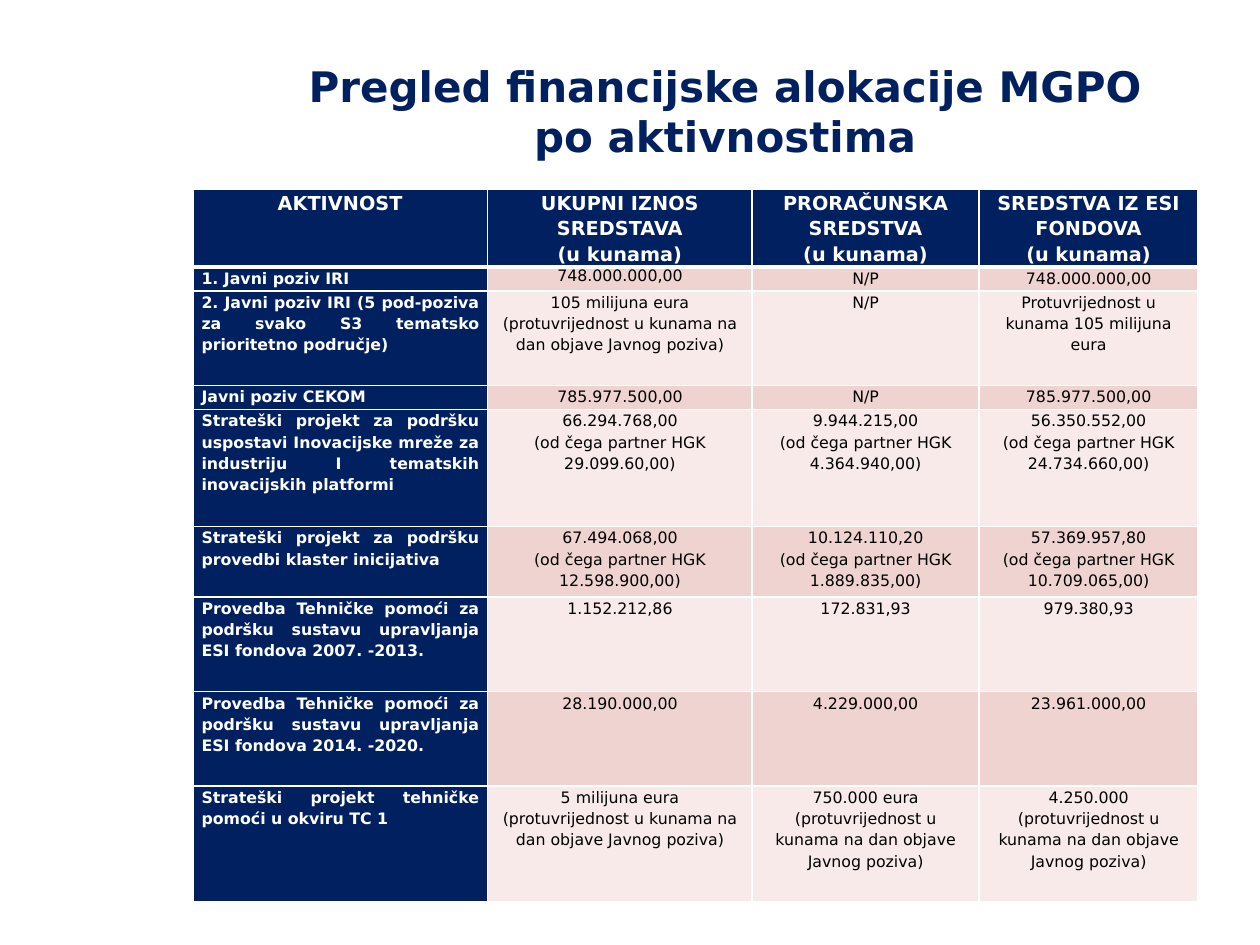
from lxml.etree import SubElement
from pptx import Presentation
from pptx.dml.color import RGBColor
from pptx.enum.text import MSO_ANCHOR, MSO_AUTO_SIZE, PP_ALIGN
from pptx.oxml.ns import qn
from pptx.util import Inches, Pt

NAVY = RGBColor(0x00, 0x20, 0x60)
WHITE = RGBColor(0xFF, 0xFF, 0xFF)
BLACK = RGBColor(0x00, 0x00, 0x00)
BANDS = [RGBColor(0xF7, 0xEA, 0xE9), RGBColor(0xEE, 0xD3, 0xD0)]
FONT = "DejaVu Sans"

TITLE = "Pregled financijske alokacije MGPO po aktivnostima"
ROWS = [
    ("AKTIVNOST", "UKUPNI IZNOS SREDSTAVA\n(u kunama)",
     "PRORAČUNSKA SREDSTVA\n(u kunama)", "SREDSTVA IZ ESI FONDOVA\n(u kunama)"),
    ("1. Javni poziv IRI", "748.000.000,00", "N/P", "748.000.000,00"),
    ("2. Javni poziv IRI (5 pod-poziva za svako S3 tematsko prioritetno područje)",
     "105 milijuna eura (protuvrijednost u kunama na dan objave Javnog poziva)",
     "N/P", "Protuvrijednost u kunama 105 milijuna eura"),
    ("Javni poziv CEKOM", "785.977.500,00", "N/P", "785.977.500,00"),
    ("Strateški projekt za podršku uspostavi Inovacijske mreže za industriju I "
     "tematskih inovacijskih platformi",
     "66.294.768,00\n(od čega partner HGK\n29.099.60,00)",
     "9.944.215,00\n(od čega partner HGK 4.364.940,00)",
     "56.350.552,00\n(od čega partner HGK 24.734.660,00)"),
    ("Strateški projekt za podršku provedbi klaster inicijativa",
     "67.494.068,00\n(od čega partner HGK 12.598.900,00)",
     "10.124.110,20\n(od čega partner HGK\n1.889.835,00)",
     "57.369.957,80\n(od čega partner HGK 10.709.065,00)"),
    ("Provedba Tehničke pomoći za podršku sustavu upravljanja ESI fondova 2007. -2013.",
     "1.152.212,86", "172.831,93", "979.380,93"),
    ("Provedba Tehničke pomoći za podršku sustavu upravljanja ESI fondova 2014. -2020.",
     "28.190.000,00", "4.229.000,00", "23.961.000,00"),
    ("Strateški projekt tehničke pomoći u okviru TC 1",
     "5 milijuna eura (protuvrijednost u kunama na dan objave Javnog poziva)",
     "750.000 eura (protuvrijednost u kunama na dan objave Javnog poziva)",
     "4.250.000 (protuvrijednost u kunama na dan objave Javnog poziva)"),
]
COLUMN_WIDTHS = [2.34, 2.1, 1.8, 1.74]
ROW_HEIGHTS = [0.62, 0.19, 0.75, 0.19, 0.93, 0.56, 0.75, 0.75, 0.92]


def set_font(paragraph, size, color, bold):
    paragraph.font.name = FONT
    paragraph.font.size = Pt(size)
    paragraph.font.color.rgb = color
    paragraph.font.bold = bold


def add_borders(cell, top, bottom):
    properties = cell._tc.get_or_add_tcPr()
    for side, width in (("L", 1), ("R", 1), ("T", top), ("B", bottom)):
        line = SubElement(properties, qn(f"a:ln{side}"), w=str(Pt(width)))
        fill = SubElement(line, qn("a:solidFill"))
        SubElement(fill, qn("a:srgbClr"), val=str(WHITE))


def fill_cell(cell, text, row, column):
    heading = row == 0 or column == 0
    cell.margin_left = cell.margin_right = Inches(0.07)
    cell.margin_top = cell.margin_bottom = 0
    add_borders(cell, 3 if row == 1 else 1, 3 if row == 0 else 1)
    cell.fill.solid()
    cell.fill.fore_color.rgb = NAVY if heading else BANDS[row % 2]
    cell.text = text
    for paragraph in cell.text_frame.paragraphs:
        justified = column == 0 and row > 0
        paragraph.alignment = PP_ALIGN.JUSTIFY if justified else PP_ALIGN.CENTER
        paragraph.line_spacing = 1 if (row, column) == (1, 1) else 1.15
        set_font(paragraph, 9 if row else 11, WHITE if heading else BLACK, heading)


def main():
    presentation = Presentation()
    presentation.slide_width, presentation.slide_height = Inches(10), Inches(7.5)
    slide = presentation.slides.add_slide(presentation.slide_layouts[5])

    title = slide.shapes.title
    title.left, title.top = Inches(2.17), Inches(0.25)
    title.width, title.height = Inches(7.17), Inches(1.08)
    title.text_frame.text = TITLE
    title.text_frame.auto_size = MSO_AUTO_SIZE.NONE
    title.text_frame.vertical_anchor = MSO_ANCHOR.BOTTOM
    title.text_frame.paragraphs[0].alignment = PP_ALIGN.CENTER
    set_font(title.text_frame.paragraphs[0], 24, NAVY, True)

    table = slide.shapes.add_table(
        len(ROWS), len(COLUMN_WIDTHS), Inches(1.53), Inches(1.5),
        Inches(sum(COLUMN_WIDTHS)), Inches(sum(ROW_HEIGHTS))).table
    for column, width in zip(table.columns, COLUMN_WIDTHS):
        column.width = Inches(width)
    for row, height in zip(table.rows, ROW_HEIGHTS):
        row.height = Inches(height)
    for row, texts in enumerate(ROWS):
        for column, text in enumerate(texts):
            fill_cell(table.cell(row, column), text, row, column)

    presentation.save("out.pptx")


if __name__ == "__main__":
    main()
